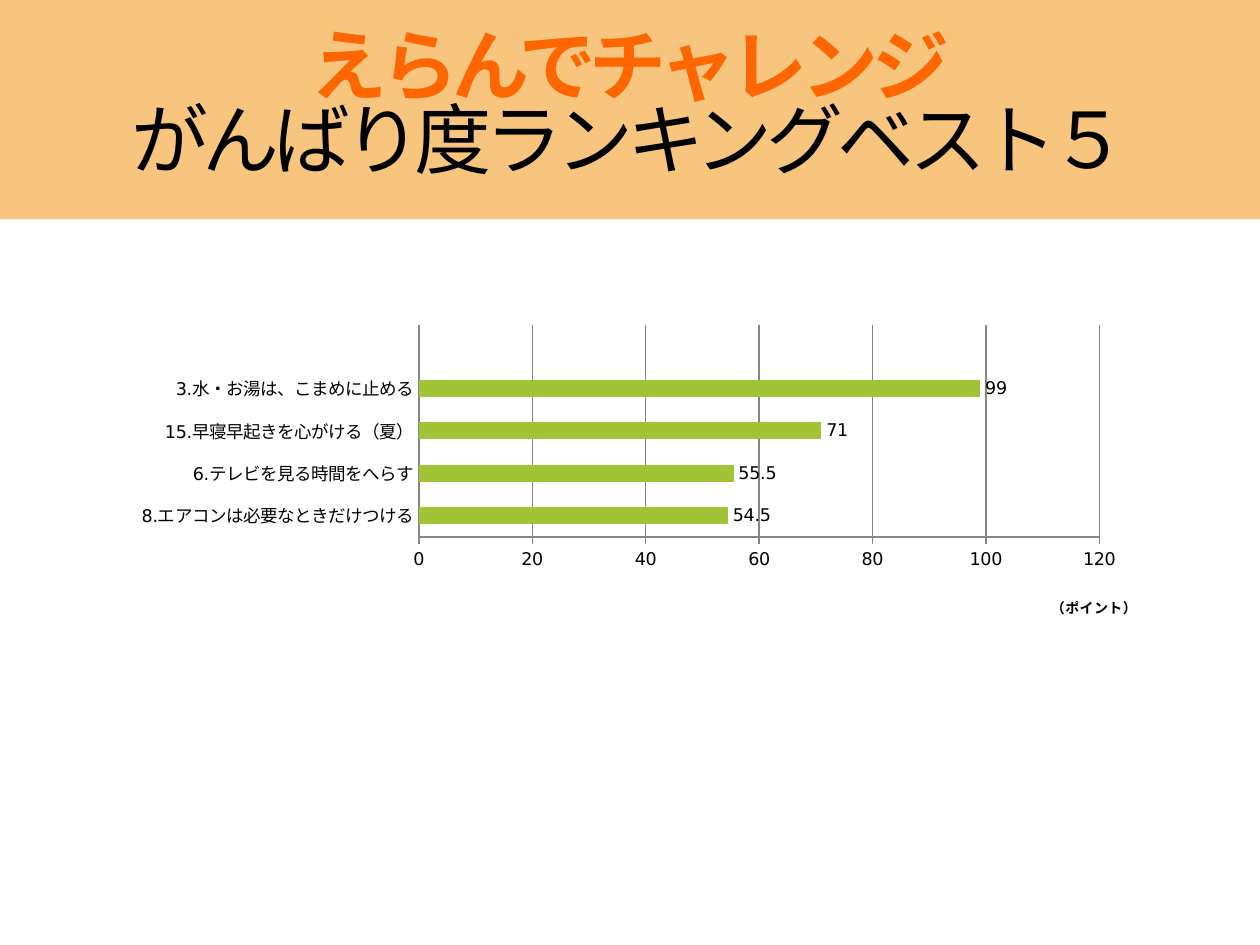
from pptx import Presentation
from pptx.chart.data import CategoryChartData
from pptx.dml.color import RGBColor
from pptx.enum import chart as ch, text
from pptx.oxml import parse_xml
from pptx.oxml.ns import nsdecls
from pptx.util import Inches, Pt

COLORS = {"band": "F7C57D", "accent": "FF6600", "text": "000000",
          "bar": "A0C435", "line": "868686"}
TITLE_FONT, CHART_FONT = "Noto Sans CJK JP", "DejaVu Sans"
SCORES = [("8.エアコンは必要なときだけつける", 54.5),
          ("6.テレビを見る時間をへらす", 55.5),
          ("15.早寝早起きを心がける（夏）", 71),
          ("3.水・お湯は、こまめに止める", 99),
          ("", None)]


def rgb(name):
    return RGBColor.from_string(COLORS[name])


def set_font(font, color, **values):
    for key, value in values.items():
        setattr(font, key, value)
    font.color.rgb = rgb(color)


def add_layout(parent, after, **values):
    """Place a chart part by fractions of the chart area."""
    old = parent.find("{*}layout")
    if old is not None:
        parent.remove(old)
    target = '<c:layoutTarget val="inner"/>' if "w" in values else ""
    modes = "".join(f'<c:{k}Mode val="edge"/>' for k in "xy")
    sizes = "".join(f'<c:{k} val="{v}"/>' for k, v in values.items())
    layout = parse_xml(f'<c:layout {nsdecls("c")}><c:manualLayout>{target}'
                       f'{modes}{sizes}</c:manualLayout></c:layout>')
    if after is None:
        parent.insert(0, layout)
    else:
        after.addnext(layout)


def title_band(s, x, y, w, h):
    sp = s.shapes.title
    sp.left, sp.top, sp.width, sp.height = x, y, w, h
    sp.fill.solid()
    sp.fill.fore_color.rgb = rgb("band")
    tf = sp.text_frame
    tf.auto_size = text.MSO_AUTO_SIZE.NONE
    tf.word_wrap = False
    tf.vertical_anchor = text.MSO_ANCHOR.MIDDLE
    p = tf.paragraphs[0]
    p.alignment = text.PP_ALIGN.CENTER
    p.line_spacing = 0.8
    lines = [("えらんでチャレンジ", "accent", True),
             ("がんばり度ランキングベスト５", "text", False)]
    for i, (words, color, bold) in enumerate(lines):
        if i:
            p.add_line_break()
        r = p.add_run()
        r.text = words
        set_font(r.font, color, name=TITLE_FONT, size=Pt(44), bold=bold)
        rPr = r._r.get_or_add_rPr()
        rPr.set("spc", "-360")
        rPr.append(parse_xml(f'<a:ea {nsdecls("a")} typeface="{TITLE_FONT}"/>'))


def ranking_chart(s, x, y, w, h):
    data = CategoryChartData()
    data.categories = [name for name, _ in SCORES]
    data.add_series("Series 1", [score for _, score in SCORES])
    chart = s.shapes.add_chart(ch.XL_CHART_TYPE.BAR_CLUSTERED,
                               x, y, w, h, data).chart
    chart.has_legend = chart.has_title = False
    set_font(chart.font, "text", name=CHART_FONT, size=Pt(10))
    add_layout(chart._chartSpace.chart.plotArea, None,
               x=0.294, y=0.02, w=0.666, h=0.69)

    plot = chart.plots[0]
    plot.gap_width = 150
    plot.vary_by_categories = False
    fill = plot.series[0].format.fill
    fill.solid()
    fill.fore_color.rgb = rgb("bar")
    plot.has_data_labels = True
    labels = plot.data_labels
    labels.show_value = True
    labels.position = ch.XL_LABEL_POSITION.OUTSIDE_END
    set_font(labels.font, "text", name=CHART_FONT, size=Pt(10))

    cat, val = chart.category_axis, chart.value_axis
    cat.major_tick_mark = ch.XL_TICK_MARK.NONE
    val.major_tick_mark = ch.XL_TICK_MARK.OUTSIDE
    val.minimum_scale, val.maximum_scale, val.major_unit = 0, 120, 20
    val.has_major_gridlines = True
    for part in (cat, val, val.major_gridlines):
        part.format.line.color.rgb = rgb("line")
        part.format.line.width = Pt(0.75)

    title = val.axis_title
    p = title.text_frame.paragraphs[0]
    r = p.add_run()
    r.text = "（ポイント）"
    set_font(r.font, "text", name=CHART_FONT, size=Pt(8), bold=True)
    add_layout(title._element, title._element.find("{*}tx"), x=0.91, y=0.89)


def main():
    prs = Presentation()
    prs.slide_width, prs.slide_height = Inches(10), Inches(7.5)
    s = prs.slides.add_slide(prs.slide_layouts[5])
    title_band(s, 0, 0, prs.slide_width, Inches(1.74))
    ranking_chart(s, Inches(0.94), Inches(2.53), Inches(8.11), Inches(2.44))
    prs.save("out.pptx")


if __name__ == "__main__":
    main()
